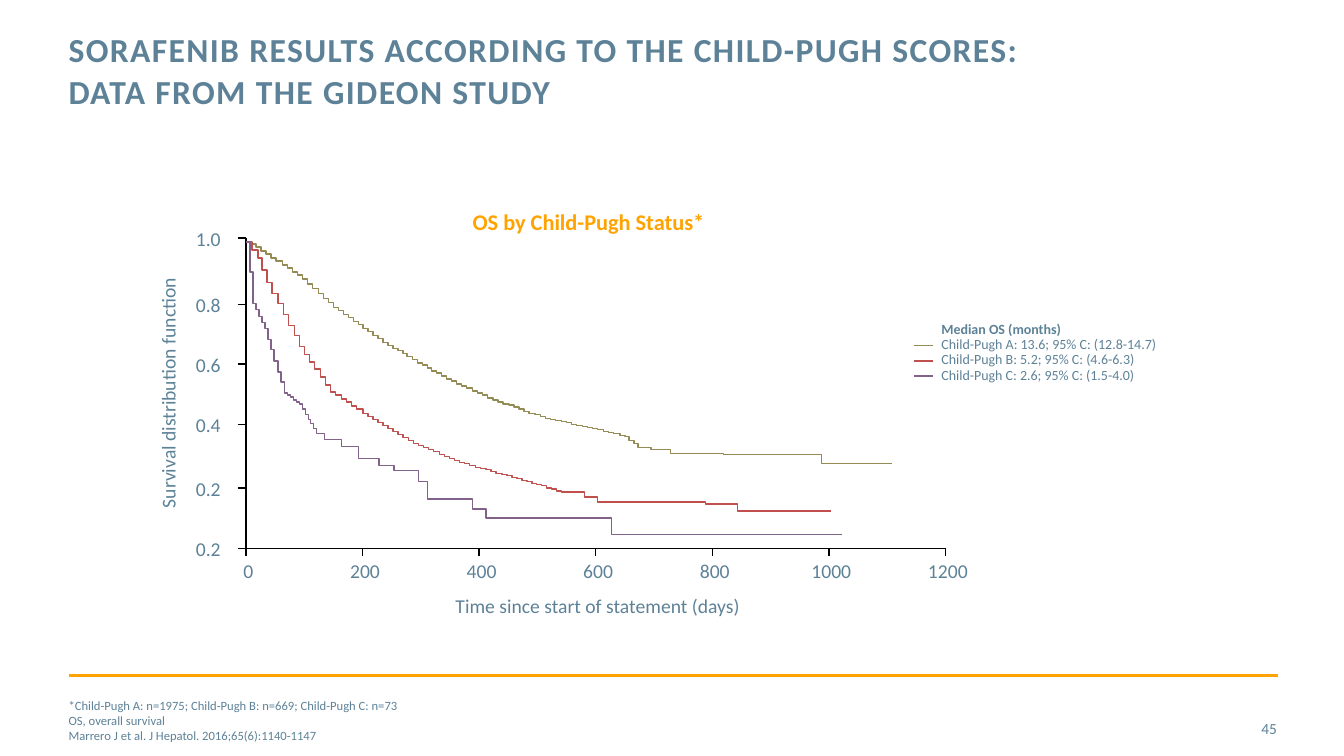
"""Build a slide with survival curves by Child-Pugh status."""
from dataclasses import dataclass

from lxml import etree
from pptx import Presentation
from pptx.dml.color import RGBColor
from pptx.enum.shapes import MSO_CONNECTOR
from pptx.enum.text import MSO_ANCHOR, MSO_AUTO_SIZE, PP_ALIGN
from pptx.oxml.ns import qn
from pptx.util import Cm, Length, Pt

LEFT, CENTER, RIGHT = PP_ALIGN.LEFT, PP_ALIGN.CENTER, PP_ALIGN.RIGHT
TOP, MIDDLE, BOTTOM = MSO_ANCHOR.TOP, MSO_ANCHOR.MIDDLE, MSO_ANCHOR.BOTTOM
NO_FIT = MSO_AUTO_SIZE.NONE
STRAIGHT = MSO_CONNECTOR.STRAIGHT
FONT = "Calibri"
SLATE, ORANGE, AMBER, BLACK = "5D8298", "FEA302", "FFA402", "000000"
OLIVE, RED, PURPLE = "948A54", "C0504D", "826288"
AXIS_LEFT, AXIS_TOP, AXIS_RIGHT, AXIS_BOTTOM = 244, 236, 938, 544
CURVE_TOP = 240
TICK = 8
LEGEND_TOP, LEGEND_GAP = 343, 15


@dataclass(frozen=True)
class Label:
    """A text box, placed in hundredths of an inch."""
    lines: tuple[str, ...]
    left: float
    top: float
    width: float
    height: float
    size: int
    align: PP_ALIGN = LEFT
    anchor: MSO_ANCHOR = TOP
    color: str = SLATE
    bold_lines: int = 0
    spacing: float = 1.0
    wrap: bool = True
    rotation: int = 0


@dataclass(frozen=True)
class Curve:
    """A step curve: even steps of about one run between bends, then single drops."""
    color: str
    run: int
    bends: tuple[tuple[int, int], ...]
    drops: tuple[tuple[int, int], ...]
    end: int


CURVES = (
    Curve(OLIVE, 5,
          ((254, 245), (300, 277), (331, 305), (385, 343), (443, 376), (489, 397),
           (541, 415), (588, 425), (620, 433), (633, 444)),
          ((646, 446), (665, 450), (718, 451), (815, 460)), 885),
    Curve(RED, 5,
          ((256, 256), (265, 280), (297, 344), (328, 389), (365, 413), (410, 440),
           (456, 459), (508, 474), (557, 488)),
          ((580, 493), (593, 498), (700, 500), (732, 507)), 825),
    Curve(PURPLE, 3,
          ((251, 301), (263, 326), (282, 390), (297, 401), (314, 430)),
          ((322, 436), (339, 443), (356, 455), (376, 462), (391, 467), (415, 478),
           (424, 495), (469, 505), (482, 514), (607, 530)), 835),
)

Y_TICKS = (("1.0", 236), ("0.8", 302), ("0.6", 361), ("0.4", 421), ("0.2", 484), ("0.2", 544))
X_LABELS = ("0", "200", "400", "600", "800", "1000", "1200")

LABELS = (
    Label(("*Child-Pugh A: n=1975; Child-Pugh B: n=669; Child-Pugh C: n=73",
           "OS, overall survival",
           "Marrero J et al. J Hepatol. 2016;65(6):1140-1147"),
          68, 695, 888, 40, 9, anchor=MIDDLE),
    Label(("OS by Child-Pugh Status*",), 448, 209, 272, 65, 16, CENTER,
          color=ORANGE, bold_lines=1, spacing=0.9, wrap=False),
    Label(("Time since start of statement (days)",), 244, 589, 698, 24, 14, CENTER),
    Label(("Survival distribution function",), 12, 378, 308, 24, 14, CENTER, BOTTOM,
          rotation=270),
    Label(("Median OS (months)",
           "Child-Pugh A: 13.6; 95% C: (12.8-14.7)",
           "Child-Pugh B: 5.2; 95% C: (4.6-6.3)",
           "Child-Pugh C: 2.6; 95% C: (1.5-4.0)"),
          934, 320, 291, 65, 10, bold_lines=1, spacing=0.9, wrap=False),
    Label(("45",), 1181, 703, 86, 40, 11, RIGHT, MIDDLE),
)


def units(count: float) -> Length:
    """Turn hundredths of an inch into a length."""
    return Cm(count * 2.54 / 100)


def rgb(value: str) -> RGBColor:
    """Turn a hex string into a colour."""
    return RGBColor.from_string(value)


def set_frame(frame, anchor: MSO_ANCHOR, wrap: bool) -> None:
    """Give a text frame no insets, and its anchor and wrapping."""
    frame.margin_left = frame.margin_right = frame.margin_top = frame.margin_bottom = 0
    frame.auto_size = NO_FIT
    frame.vertical_anchor = anchor
    frame.word_wrap = wrap


def set_font(font, size: int, color: str, bold: bool) -> None:
    """Format a font."""
    font.name, font.size, font.bold = FONT, Pt(size), bold
    font.color.rgb = rgb(color)


def add_title(page) -> None:
    """Fill, place and format the title placeholder."""
    box = page.shapes.title
    box.left, box.top, box.width, box.height = map(units, (68, 27, 956, 88))
    set_frame(box.text_frame, TOP, True)
    para = box.text_frame.paragraphs[0]
    span = para.add_run()
    span.text = "SORAFENIB RESULTS ACCORDING TO THE CHILD-PUGH SCORES: DATA FROM THE GIDEON STUDY"
    para.alignment, para.line_spacing = LEFT, Pt(30)
    set_font(span.font, 24, SLATE, True)
    span.font._element.set("spc", "100")


def add_label(page, label: Label) -> None:
    """Draw a text box."""
    box = page.shapes.add_textbox(
        *map(units, (label.left, label.top, label.width, label.height)))
    box.rotation = label.rotation
    frame = box.text_frame
    set_frame(frame, label.anchor, label.wrap)
    for index, line in enumerate(label.lines):
        para = frame.add_paragraph() if index else frame.paragraphs[0]
        para.text = line
        para.alignment, para.line_spacing = label.align, label.spacing
        set_font(para.font, label.size, label.color, index < label.bold_lines)


def add_line(page, start: tuple[float, float], end: tuple[float, float],
             color: str = BLACK, width: float = 1) -> None:
    """Draw a straight line without a shadow."""
    line = page.shapes.add_connector(STRAIGHT, *map(units, start + end))
    line.line.color.rgb, line.line.width = rgb(color), Pt(width)
    etree.SubElement(line._element.spPr, qn("a:effectLst"))


def add_axes(page) -> None:
    """Draw both axes with their ticks and tick labels."""
    add_line(page, (AXIS_LEFT, AXIS_TOP), (AXIS_LEFT, AXIS_BOTTOM))
    add_line(page, (AXIS_LEFT, AXIS_BOTTOM), (AXIS_RIGHT, AXIS_BOTTOM))
    for text, y in Y_TICKS:
        add_line(page, (AXIS_LEFT - TICK, y), (AXIS_LEFT, y))
        add_label(page, Label((text,), 194, y - 11.5, 25, 24, 14, RIGHT, MIDDLE, wrap=False))
    gap = (AXIS_RIGHT - AXIS_LEFT) / (len(X_LABELS) - 1)
    for index, text in enumerate(X_LABELS):
        x = AXIS_LEFT + index * gap
        add_line(page, (x, AXIS_BOTTOM), (x, AXIS_BOTTOM + TICK))
        add_label(page, Label((text,), x - 19, 554, 43, 37, 14, CENTER, wrap=False))


def step_points(curve: Curve) -> list[tuple[float, float]]:
    """Work out the corners of a step curve."""
    x, y = AXIS_LEFT, CURVE_TOP
    corners = []
    for bend_x, bend_y in curve.bends:
        count = max(1, round((bend_x - x) / curve.run))
        for step in range(1, count + 1):
            share = step / count
            corners.append((x + (bend_x - x) * share, y + (bend_y - y) * share))
        x, y = bend_x, bend_y
    points = []
    level = CURVE_TOP
    for x, y in corners + list(curve.drops):
        points += [(x, level), (x, y)]
        level = y
    return points + [(curve.end, level)]


def add_curve(page, curve: Curve, legend_y: int) -> None:
    """Draw a step curve and its legend line."""
    builder = page.shapes.build_freeform(AXIS_LEFT, CURVE_TOP, scale=units(1))
    builder.add_line_segments(step_points(curve), close=False)
    shape = builder.convert_to_shape()
    shape.shadow.inherit = False
    shape.fill.background()
    shape.line.color.rgb, shape.line.width = rgb(curve.color), Pt(1)
    add_line(page, (907, legend_y), (926, legend_y), curve.color)


def main() -> None:
    """Build and save the deck."""
    deck = Presentation()
    deck.slide_width, deck.slide_height = Cm(33.87), Cm(19.05)
    page = deck.slides.add_slide(deck.slide_layouts[5])
    add_title(page)
    add_line(page, (68, 670), (1268, 670), AMBER, 2)
    add_axes(page)
    for index, curve in enumerate(CURVES):
        add_curve(page, curve, LEGEND_TOP + index * LEGEND_GAP)
    for label in LABELS:
        add_label(page, label)
    deck.save("out.pptx")


if __name__ == "__main__":
    main()
